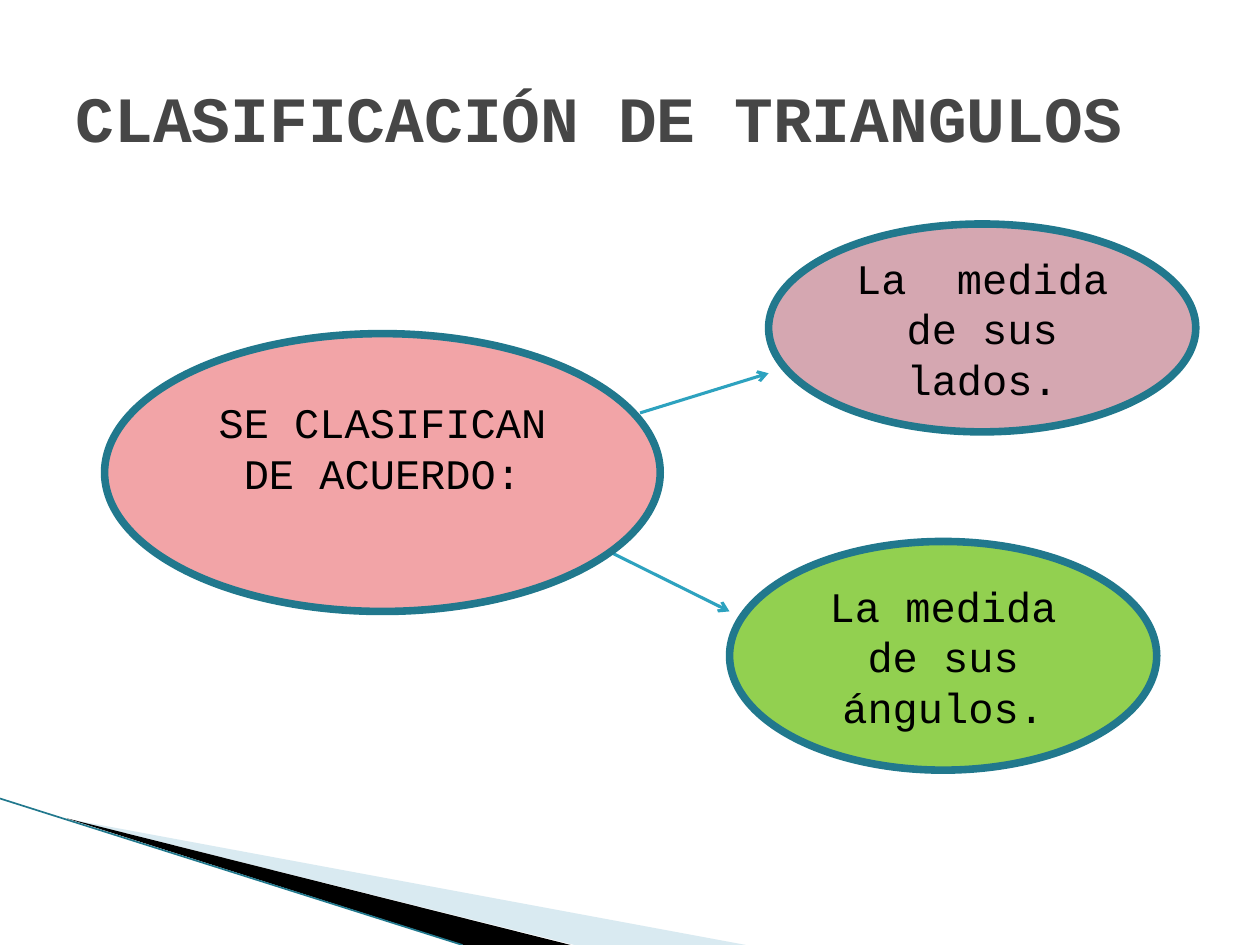
"""Build a slide that sorts triangles by sides and by angles."""
from lxml.etree import SubElement
from pptx import Presentation
from pptx.dml.color import RGBColor as Rgb
from pptx.enum.shapes import MSO_CONNECTOR as Link, MSO_SHAPE as Shape
from pptx.enum.text import MSO_ANCHOR as Anchor, PP_ALIGN as Align
from pptx.oxml.ns import qn
from pptx.util import Inches, Pt

COLORS = {
    "title": "464646", "text": "000000", "outline": "21788D", "arrow": "2DA2BF",
    "root": "F2A4A7", "sides": "D5A7B1", "angles": "92D050",
    "pale": "A0CBDC", "dark": "000000",
}
WIDTH, HEIGHT = Inches(10), Inches(7.5)


def place(across, down):
    """Turn percent shares of the slide into a point or a size."""
    return round(WIDTH * across / 100), round(HEIGHT * down / 100)


def write(box, text, align, **formats):
    """Put one formatted paragraph in a shape."""
    frame = box.text_frame
    frame.word_wrap = True
    frame.vertical_anchor = Anchor.MIDDLE
    para = frame.paragraphs[0]
    para.alignment = align
    span = para.add_run()
    span.text = text
    color = formats.pop("color")
    for name, value in {"name": "Courier New", **formats}.items():
        setattr(span.font, name, value)
    span.font.color.rgb = Rgb.from_string(COLORS[color])


deck = Presentation()
deck.slide_width, deck.slide_height = WIDTH, HEIGHT
page = deck.slides.add_slide(deck.slide_layouts[5])

wedges = [
    ("pale", [(5.5, 86.7), (59.2, 100), (45.6, 100)]),
    ("dark", [(5.3, 86.6), (45.3, 100), (36.8, 100)]),
]
for color, corners in wedges:
    start, *others = [place(*corner) for corner in corners]
    outline = page.shapes.build_freeform(*start)
    outline.add_line_segments(others, close=True)
    wedge = outline.convert_to_shape()
    wedge.shadow.inherit = False
    wedge.fill.solid()
    wedge.fill.fore_color.rgb = Rgb.from_string(COLORS[color])
    wedge.line.fill.background()
    if color == "pale":
        tint = wedge._element.spPr.find(".//" + qn("a:srgbClr"))
        SubElement(tint, qn("a:alpha"), val="40000")

title = page.shapes.title
title.left, title.top = place(5, 4)
title.width, title.height = place(90, 16.67)
write(title, "CLASIFICACIÓN DE TRIANGULOS", Align.LEFT,
      size=Pt(36.9), bold=True, color="title")

lines = [
    ("outline", 0.95, (0, 84.5), (36.7, 100), False),
    ("arrow", 1.75, (50.8, 43.7), (61, 39.5), True),
    ("arrow", 1.75, (48.4, 58.4), (57.9, 64.7), True),
]
for color, weight, start, end, pointed in lines:
    line = page.shapes.add_connector(Link.STRAIGHT, *place(*start), *place(*end))
    line.line.color.rgb = Rgb.from_string(COLORS[color])
    line.line.width = Pt(weight)
    if pointed:
        SubElement(line.line._get_or_add_ln(), qn("a:tailEnd"), type="arrow")
    SubElement(line._element.spPr, qn("a:effectLst"))

ovals = [
    ("root", "SE CLASIFICAN DE ACUERDO:", (8.3, 35.3), (44.1, 29.4), 0.45),
    ("sides", "La  medida de sus lados.", (61, 23.7), (33.9, 22), 0.05),
    ("angles", "La medida de sus ángulos.", (57.9, 57.3), (33.9, 24.2), 0.05),
]
for color, text, corner, size, bottom in ovals:
    oval = page.shapes.add_shape(Shape.OVAL, *place(*corner), *place(*size))
    oval.shadow.inherit = False
    oval.fill.solid()
    oval.fill.fore_color.rgb = Rgb.from_string(COLORS[color])
    oval.line.color.rgb = Rgb.from_string(COLORS["outline"])
    oval.line.width = Pt(4.33)
    oval.text_frame.margin_bottom = Inches(bottom)
    write(oval, text, Align.CENTER, size=Pt(24), color="text")

deck.save("out.pptx")
